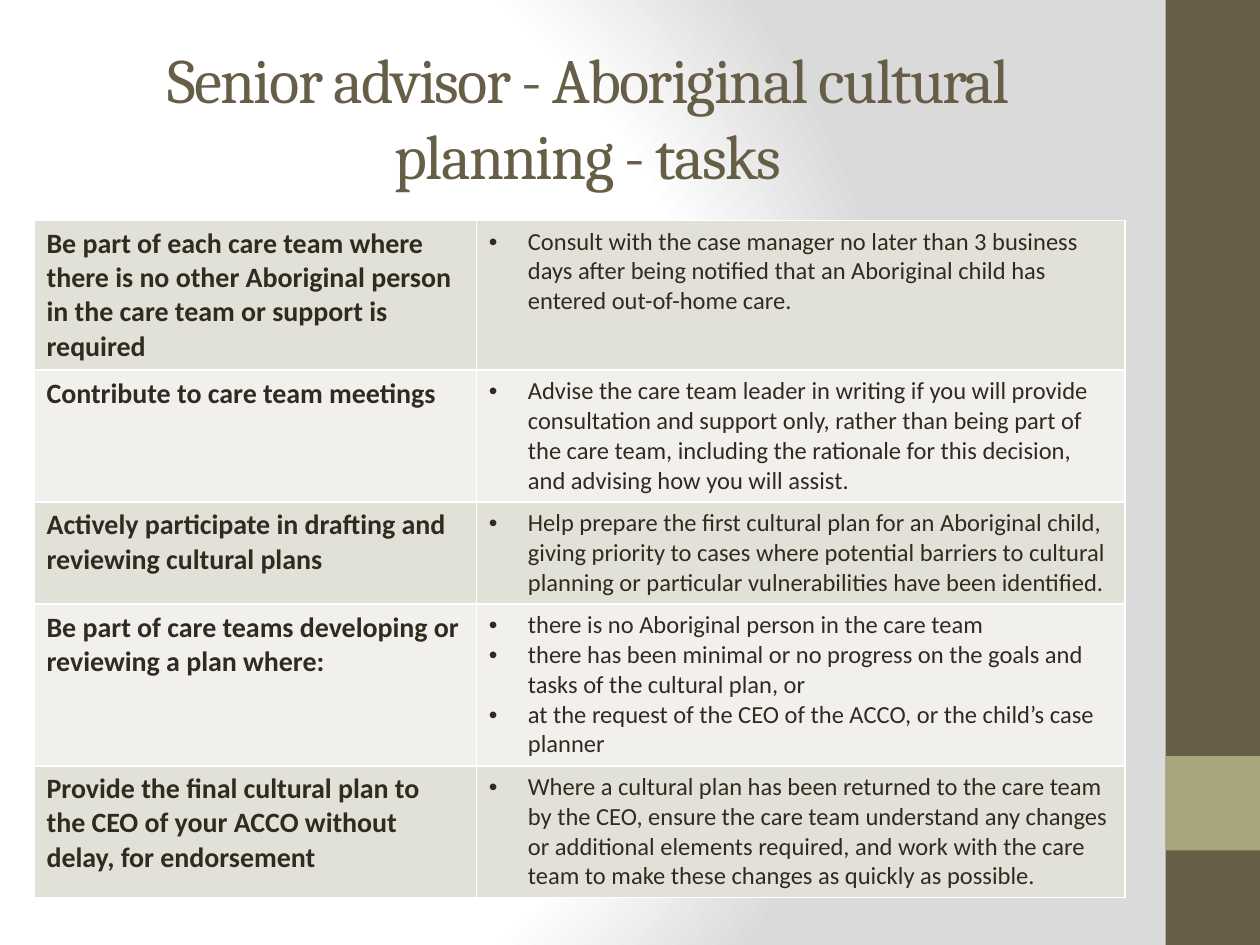
import pptx
import pptx.util
import pptx.dml.color
import pptx.enum.shapes
import pptx.enum.text
import pptx.oxml
import pptx.oxml.ns
from lxml import etree

Inches = pptx.util.Inches
NS = 'xmlns:a="http://schemas.openxmlformats.org/drawingml/2006/main"'
DARK, GOLD, INK = "675E47", "A9A57C", "2F2B20"
BANDS = ["E2E1D7", "F1F0EC"]
TASKS = [
    ("Be part of each care team where there is no other Aboriginal person "
     "in the care team or support is required",
     ["Consult with the case manager no later than 3 business days after being "
      "notified that an Aboriginal child has entered out-of-home care."]),
    ("Contribute to care team meetings",
     ["Advise the care team leader in writing if you will provide consultation "
      "and support only, rather than being part of the care team, including the "
      "rationale for this decision, and advising how you will assist."]),
    ("Actively participate in drafting and reviewing cultural plans",
     ["Help prepare the first cultural plan for an Aboriginal child, giving "
      "priority to cases where potential barriers to cultural planning or "
      "particular vulnerabilities have been identified."]),
    ("Be part of care teams developing or reviewing a plan where:",
     ["there is no Aboriginal person in the care team",
      "there has been minimal or no progress on the goals and tasks of the "
      "cultural plan, or",
      "at the request of the CEO of the ACCO, or the child’s case planner"]),
    ("Provide the final cultural plan to the CEO of your ACCO without delay, "
     "for endorsement",
     ["Where a cultural plan has been returned to the care team by the CEO, "
      "ensure the care team understand any changes or additional elements "
      "required, and work with the care team to make these changes as quickly "
      "as possible."]),
]


def color(code):
    """Return the colour for a hex string."""
    return pptx.dml.color.RGBColor.from_string(code)


def style(run, face, size, code, bold=False):
    """Set the font of a run."""
    font = run.font
    font.name, font.size, font.bold = face, pptx.util.Pt(size), bold
    font.color.rgb = color(code)


def paint(slide):
    """Give the slide its round white to grey background."""
    fill = slide.background.fill
    fill.gradient()
    stops = "".join(
        f'<a:gs pos="{pos}000"><a:srgbClr val="{code}"/></a:gs>'
        for pos, code in [(0, "FFFFFF"), (75, "FFFFFF"), (100, "DADADA")])
    grad = pptx.oxml.parse_xml(
        f'<a:gradFill {NS} rotWithShape="1"><a:gsLst>{stops}</a:gsLst>'
        '<a:path path="circle"><a:fillToRect l="20000" t="50000" r="100000" '
        'b="50000"/></a:path></a:gradFill>')
    old = slide.background._cSld.find(".//" + pptx.oxml.ns.qn("a:gradFill"))
    old.getparent().replace(old, grad)


def add_bar(slide, top, height, code):
    """Add a plain block at the right edge."""
    bar = slide.shapes.add_shape(
        pptx.enum.shapes.MSO_SHAPE.RECTANGLE,
        Inches(9.25), Inches(top), Inches(0.75), Inches(height))
    bar.shadow.inherit = False
    bar.fill.solid()
    bar.fill.fore_color.rgb = color(code)
    bar.line.fill.background()


def set_title(slide, text):
    """Place and format the title."""
    title = slide.shapes.title
    title.left, title.top = Inches(0.5), Inches(0.3)
    title.width, title.height = Inches(8.33), Inches(1.25)
    frame = title.text_frame
    frame.text = text
    frame.vertical_anchor = pptx.enum.text.MSO_ANCHOR.MIDDLE
    para = frame.paragraphs[0]
    para.alignment = pptx.enum.text.PP_ALIGN.CENTER
    run = para.runs[0]
    style(run, "Cambria", 36, DARK)
    run.font._element.set("spc", "-100")


def add_bullet(para):
    """Give a paragraph a hanging bullet."""
    props = para._p.get_or_add_pPr()
    props.set("marL", str(Inches(0.31)))
    props.set("indent", str(Inches(-0.31)))
    for tag, key, value in [("buFont", "typeface", "Arial"), ("buChar", "char", "•")]:
        etree.SubElement(props, pptx.oxml.ns.qn("a:" + tag)).set(key, value)


def fill_cell(cell, lines, size, band, head):
    """Write a cell with white borders and a band fill."""
    props = cell._tc.get_or_add_tcPr()
    for side in "LRTB":
        props.append(pptx.oxml.parse_xml(
            f'<a:ln{side} {NS} w="12700"><a:solidFill>'
            f'<a:srgbClr val="FFFFFF"/></a:solidFill></a:ln{side}>'))
    cell.fill.solid()
    cell.fill.fore_color.rgb = color(band)
    cell.text_frame.text = "\n".join(lines)
    for para in cell.text_frame.paragraphs:
        style(para.runs[0], "Calibri", size, INK, head)
        if not head:
            add_bullet(para)


def add_tasks(slide):
    """Add the table of tasks."""
    frame = slide.shapes.add_table(
        len(TASKS), 2, Inches(0.27), Inches(1.75), Inches(8.66), Inches(5.3))
    table = frame.table
    table.first_row = table.horz_banding = False
    for col, width in zip(table.columns, [3.51, 5.15]):
        col.width = Inches(width)
    for row, (task, notes) in enumerate(TASKS):
        table.rows[row].height = Inches(0.41)
        band = BANDS[row % 2]
        fill_cell(table.cell(row, 0), [task], 16, band, True)
        fill_cell(table.cell(row, 1), notes, 14, band, False)
    frame.height = Inches(5.3)


def main():
    """Build and save the slide."""
    deck = pptx.Presentation()
    deck.slide_width, deck.slide_height = Inches(10), Inches(7.5)
    slide = deck.slides.add_slide(deck.slide_layouts[5])
    paint(slide)
    add_bar(slide, 0, 7.5, DARK)
    add_bar(slide, 6, 0.75, GOLD)
    set_title(slide, "Senior advisor - Aboriginal cultural planning - tasks")
    add_tasks(slide)
    deck.save("out.pptx")


if __name__ == "__main__":
    main()
